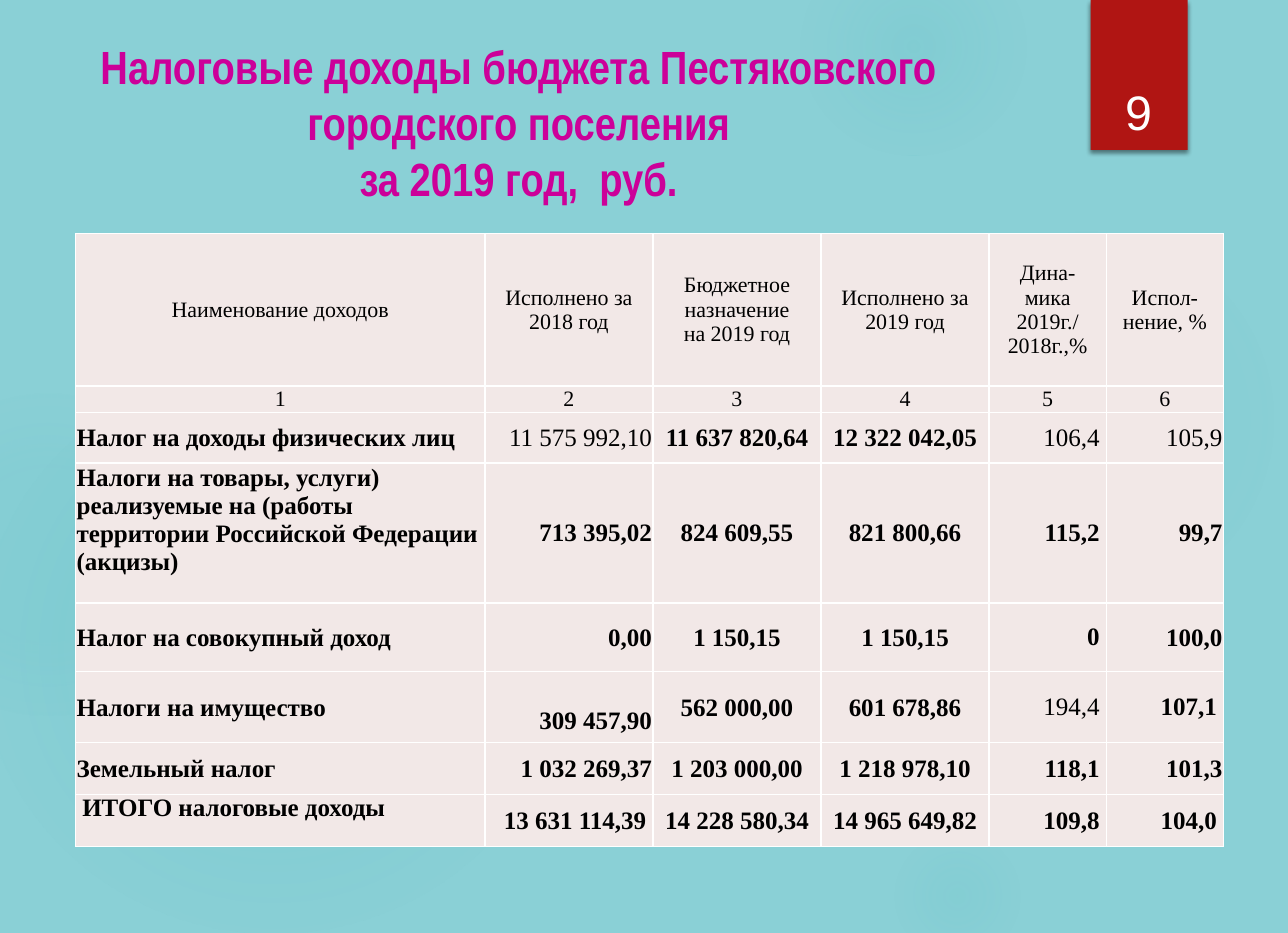
from pptx import Presentation
from pptx.dml.color import RGBColor
from pptx.enum import shapes, text
from pptx.oxml import parse_xml
from pptx.util import Inches, Pt

NS = 'xmlns:a="http://schemas.openxmlformats.org/drawingml/2006/main"'
HUES = {"back": "8AD0D6", "glow": "50B9C1", "flag": "B01513", "title": "CC0099",
        "cell": "F2E8E7", "white": "FFFFFF", "black": "000000"}
LEFT, MID, RIGHT = text.PP_ALIGN.LEFT, text.PP_ALIGN.CENTER, text.PP_ALIGN.RIGHT
TOP, CENTRE, BOTTOM = (text.MSO_ANCHOR.TOP, text.MSO_ANCHOR.MIDDLE,
                       text.MSO_ANCHOR.BOTTOM)


def adjust(item, vals):
    for name, val in vals.items():
        setattr(item, name, val)


def tint(hue):
    return RGBColor.from_string(HUES[hue])


class Page:
    def __init__(self, deck):
        self.slide = deck.slides.add_slide(deck.slide_layouts[6])
        fill = self.slide.background.fill
        fill.solid()
        fill.fore_color.rgb = tint("back")

    def shape(self, kind, box, hue):
        item = self.slide.shapes.add_shape(kind, *map(Inches, box))
        item.shadow.inherit = False
        item.fill.solid()
        item.fill.fore_color.rgb = tint(hue)
        item.line.fill.background()
        return item

    def glow(self, box, stops):
        """Ellipse that fades out from its centre; stops are (place, opacity)."""
        item = self.shape(shapes.MSO_SHAPE.OVAL, box, "glow")
        marks = "".join(
            f'<a:gs pos="{pos * 1000}"><a:srgbClr val="{HUES["glow"]}">'
            f'<a:alpha val="{alpha * 1000}"/></a:srgbClr></a:gs>'
            for pos, alpha in stops)
        grad = parse_xml(
            f'<a:gradFill {NS} rotWithShape="1"><a:gsLst>{marks}</a:gsLst>'
            '<a:path path="circle"><a:fillToRect l="50000" t="50000" r="50000"'
            ' b="50000"/></a:path></a:gradFill>')
        props = item.element.spPr
        props.replace(props.find("{*}solidFill"), grad)

    def flag(self, box):
        item = self.shape(shapes.MSO_SHAPE.RECTANGLE, box, "flag")
        item.element.spPr.find("{*}effectLst").append(parse_xml(
            f'<a:outerShdw {NS} blurRad="{Pt(3)}" dist="{Pt(2)}" dir="5400000">'
            f'<a:srgbClr val="{HUES["black"]}"><a:alpha val="45000"/></a:srgbClr>'
            '</a:outerShdw>'))

    def words(self, frame, words, hue, align, style):
        frame.word_wrap = True
        frame.text = words
        for para in frame.paragraphs:
            para.alignment = align
            for run in para.runs:
                adjust(run.font, style)
                run.font.color.rgb = tint(hue)

    def label(self, box, words, hue, anchor, style):
        frame = self.slide.shapes.add_textbox(*map(Inches, box)).text_frame
        frame.vertical_anchor = anchor
        self.words(frame, words, hue, MID, style)

    def cell(self, cell, words, align, style, form):
        self.words(cell.text_frame, words, "black", align, style)
        adjust(cell, form)
        props = cell._tc.get_or_add_tcPr()
        for side in "LRTB":
            props.append(parse_xml(
                f'<a:ln{side} {NS} w="{Pt(1)}"><a:solidFill>'
                f'<a:srgbClr val="{HUES["white"]}"/></a:solidFill></a:ln{side}>'))
        cell.fill.solid()
        cell.fill.fore_color.rgb = tint("cell")

    def table(self, spot, wide, high, rows):
        box = (*spot, sum(wide), sum(high))
        grid = self.slide.shapes.add_table(
            len(high), len(wide), *map(Inches, box)).table
        adjust(grid, {"first_row": False, "horz_banding": False})
        for col, size in zip(grid.columns, wide):
            col.width = Inches(size)
        for row, size in zip(grid.rows, high):
            row.height = Inches(size)
        for r, row in enumerate(rows):
            for c, words in enumerate(row):
                head = r < 2
                loose = head or r == 7 or c == 4 or (r, c) == (5, 5)
                side = Inches(0.06 if loose else 0.01)
                style = {"name": "Times New Roman", "size": Pt(14 if head else 16),
                         "bold": not head and (r, c) not in PLAIN}
                form = {"margin_left": side, "margin_right": side,
                        "margin_top": Inches(DROP.get((r, c), 0 if loose else 0.01)),
                        "margin_bottom": 0,
                        "vertical_anchor": TOP if (r, c) in HIGH else CENTRE}
                self.cell(grid.cell(r, c), words, MID if head else ALIGN[c],
                          style, form)


# Table content and its exceptions, keyed by (row, column)
ALIGN = [LEFT, RIGHT, MID, MID, RIGHT, RIGHT]
PLAIN = {(2, 1), (2, 4), (2, 5), (5, 4)}
HIGH = {(3, 0), (7, 0)}
DROP = {(5, 1): 0.25}
WIDE = [3.63, 1.49, 1.49, 1.49, 1.04, 1.04]
TALL = [1.35, 0.23, 0.45, 1.24, 0.61, 0.63, 0.46, 0.46]
ROWS = [
    ["Наименование доходов", "Исполнено за 2018 год",
     "Бюджетное назначение\nна 2019 год", "Исполнено за 2019 год",
     "Дина-\nмика\n2019г./ 2018г.,%", "Испол-нение, %"],
    ["1", "2", "3", "4", "5", "6"],
    ["Нaлог нa доходы физических лиц", "11 575 992,10", "11 637 820,64",
     "12 322 042,05", "106,4", "105,9"],
    ["Налоги нa товары, услуги) реализуемые нa (работы территории "
     "Российской Федерации (акцизы)", "713 395,02", "824 609,55",
     "821 800,66", "115,2", "99,7"],
    ["Налог на совокупный доход", "0,00", "1 150,15", "1 150,15", "0", "100,0"],
    ["Нaлоги нa имущество", "309 457,90", "562 000,00", "601 678,86",
     "194,4", "107,1"],
    ["Земельный нaлог", "1 032 269,37", "1 203 000,00", "1 218 978,10",
     "118,1", "101,3"],
    ["ИТОГО налоговые доходы", "13 631 114,39", "14 228 580,34",
     "14 965 649,82", "109,8", "104,0"],
]
GLOWS = [
    ((7.87, 2.02, 3.52, 3.4), [(0, 7), (36, 6), (69, 0)]),
    ((7.1, -0.55, 2, 1.93), [(0, 14), (36, 7), (73, 0)]),
    ((7.87, 7.35, 1.24, 1.19), [(0, 9), (36, 5), (66, 0)]),
    ((-0.19, 3.22, 5.23, 5.05), [(0, 11), (36, 10), (75, 0)]),
    ((-1.05, 3.49, 2.95, 2.85), [(0, 8), (36, 8), (72, 0)]),
]


def main():
    deck = Presentation()
    adjust(deck, {"slide_width": Inches(11.42), "slide_height": Inches(8.27)})
    page = Page(deck)

    # Backdrop
    for box, stops in GLOWS:
        page.glow(box, stops)

    # Page number
    page.flag((9.67, 0, 0.86, 1.33))
    page.label((9.7, 0.36, 0.79, 0.93), "9", "white", BOTTOM,
               {"name": "Arial", "size": Pt(30.9)})

    # Title
    page.label((0.27, 0.27, 8.66, 1.62),
               "Налоговые доходы бюджета Пестяковского городского поселения"
               "\vза 2019 год,  руб.", "title", CENTRE,
               {"name": "Arial Narrow", "size": Pt(29.7), "bold": True})

    # Tax income
    page.table((0.67, 2.07), WIDE, TALL, ROWS)
    deck.save("out.pptx")


if __name__ == "__main__":
    main()
